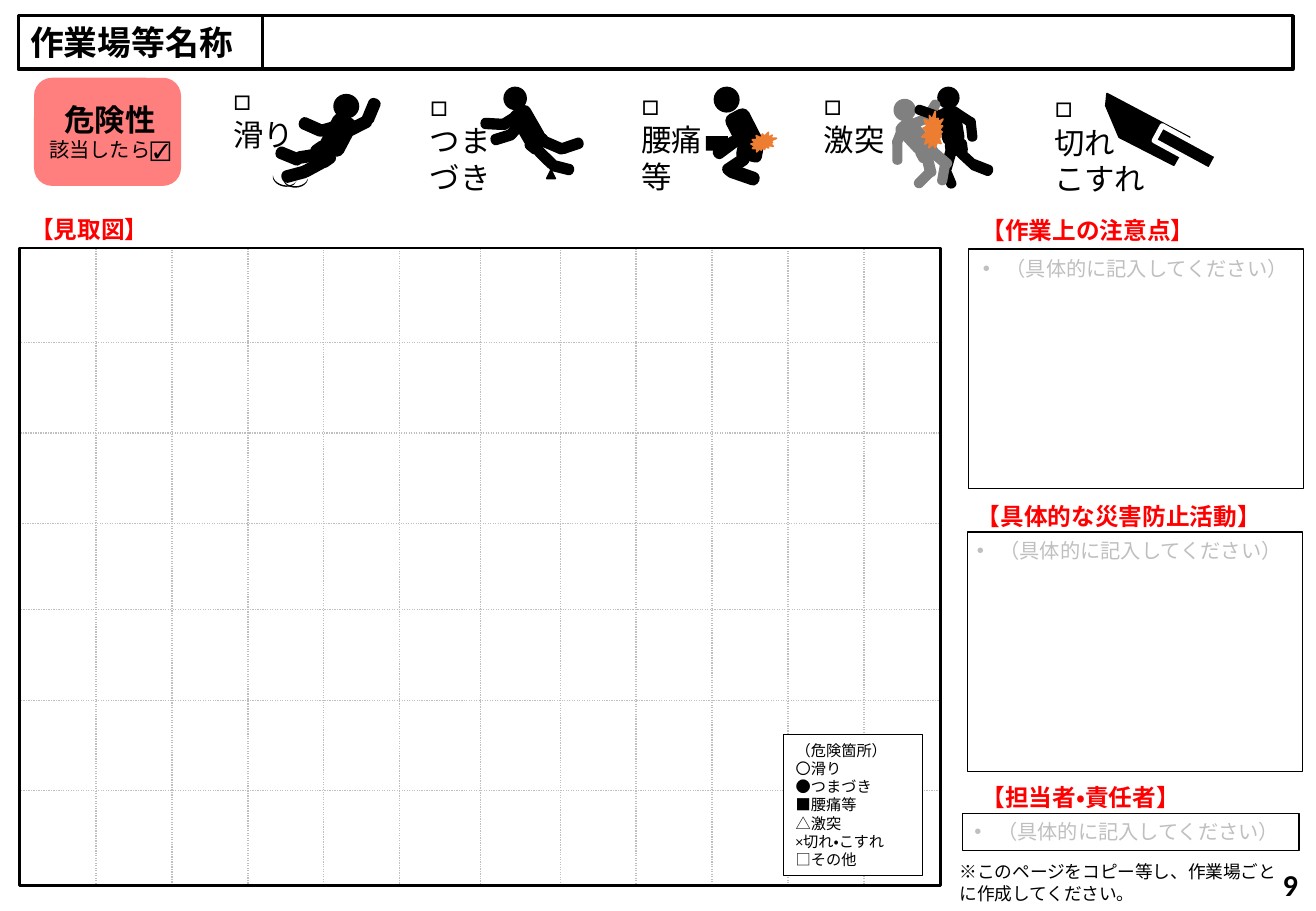
"""Build the workplace hazard map form: checklist, sketch grid and note boxes."""
from lxml import etree
from pptx import Presentation
from pptx.dml.color import RGBColor
from pptx.enum.dml import MSO_LINE
from pptx.enum.lang import MSO_LANGUAGE_ID
from pptx.enum.shapes import MSO_CONNECTOR, MSO_SHAPE
from pptx.enum.text import MSO_ANCHOR, MSO_AUTO_SIZE, PP_ALIGN
from pptx.oxml.ns import qn
from pptx.util import Cm, Pt

RECT, ROUND = MSO_SHAPE.RECTANGLE, MSO_SHAPE.ROUNDED_RECTANGLE
HEAD, LIMB = MSO_SHAPE.OVAL, MSO_SHAPE.FLOWCHART_TERMINATOR
BURST, MOON, WEDGE = MSO_SHAPE.EXPLOSION2, MSO_SHAPE.MOON, MSO_SHAPE.ISOSCELES_TRIANGLE
DOTTED, STRAIGHT = MSO_LINE.ROUND_DOT, MSO_CONNECTOR.STRAIGHT
LEFT, CENTER, RIGHT = PP_ALIGN.LEFT, PP_ALIGN.CENTER, PP_ALIGN.RIGHT
TOP, MIDDLE = MSO_ANCHOR.TOP, MSO_ANCHOR.MIDDLE
FIT, JAPANESE = MSO_AUTO_SIZE.SHAPE_TO_FIT_TEXT, MSO_LANGUAGE_ID.JAPANESE
BLACK, WHITE, GRAY, ORANGE = "000000", "FFFFFF", "808080", "ED7D31"
RED, PALE = "FF0000", "BFBFBF"
FONT = "Calibri"
ADJUSTMENT = {ROUND: 0.287, MOON: 0.166}
UNLINED = (MOON, RECT)

PAGE = (10.83, 7.5)
TITLE = ("作業場等名称", (0.15, 0.13, 2.01, 0.44), (2.16, 0.13, 8.48, 0.44))
SKETCH = (0.16, 2.04, 7.58, 5.25)
FIRST_COLUMN, COLUMN_GAP, COLUMN_PAIRS = 0.79, 0.625, 5
FIRST_ROW, ROW_GAP, ROW_PAIRS = 2.82, 0.745, 3
LEGEND = ["（危険箇所）", "〇滑り", "●つまづき", "■腰痛等", "△激突", "×切れ・こすれ", "□その他"]
LEGEND_AREA = (6.45, 6.05, 1.14, 1.16)
HEADINGS = [
    ("【見取図】", (0.15, 1.72, 1.54, 0.34)),
    ("【作業上の注意点】", (7.98, 1.73, 2.67, 0.34)),
    ("【具体的な災害防止活動】", (7.94, 4.08, 2.67, 0.34)),
    ("【担当者・責任者】", (7.98, 6.4, 2.67, 0.34)),
]
PROMPT = "（具体的に記入してください）"
NOTES = [
    ((7.97, 2.05, 2.76, 1.97), (7.99, 2.06, 2.73, 0.3)),
    ((7.96, 4.38, 2.76, 1.97), (7.94, 4.38, 2.77, 0.3)),
    ((7.92, 6.7, 2.77, 0.3), (7.92, 6.7, 2.77, 0.3)),
]
FOOTNOTE = ("※このページをコピー等し、作業場ごとに作成してください。", (7.8, 7.04, 2.9, 0.47))
PAGE_NUMBER = ("9", (8.34, 7.08, 2.44, 0.4))
BADGE = (["危険性", "該当したら☑"], (0.28, 0.64, 1.21, 0.89), (0.27, 0.78, 1.27, 0.61))
CHECKS = [
    (["□", "滑り"], (1.82, 0.61, 1.02, 0.71)),
    (["□", "つま", "づき"], (3.44, 0.66, 1.02, 1.01)),
    (["□", "激突"], (6.68, 0.65, 1.02, 0.71)),
    (["□", "腰痛", "等"], (5.18, 0.65, 1.02, 1.01)),
    (["□", "切れ", "こすれ"], (8.58, 0.67, 1.02, 1.01)),
]
BLADE = [(9.1, 0.87), (9.21, 1.13), (9.66, 1.36), (9.79, 1.13), (9.11, 0.77)]
HANDLE = (9.69, 0.96, 0.14, 0.52)
HANDLE_TURN = 298.5

SLIP = [(BLACK, [
    (HEAD, 2.75, 0.78, 0.2, 0.19, 0), (ROUND, 2.62, 1.01, 0.33, 0.2, 297.8),
    (LIMB, 2.62, 1.01, 0.22, 0.09, 344.1), (LIMB, 2.46, 1, 0.22, 0.09, 203.9),
    (LIMB, 2.95, 0.87, 0.21, 0.09, 292.5), (LIMB, 2.84, 0.99, 0.22, 0.09, 153),
    (LIMB, 2.27, 1.24, 0.22, 0.09, 22.3), (ROUND, 2.59, 1.17, 0.14, 0.2, 324.7),
    (LIMB, 2.32, 1.39, 0.22, 0.09, 345), (LIMB, 2.47, 1.33, 0.22, 0.09, 151.6),
    (LIMB, 2.43, 1.24, 0.22, 0.09, 350.7), (MOON, 2.3, 1.4, 0.07, 0.2, 283.4),
    (MOON, 2.4, 1.41, 0.07, 0.2, 267),
])]
TRIP = [(BLACK, [
    (HEAD, 4.15, 0.72, 0.18, 0.18, 357.5), (ROUND, 4.18, 0.95, 0.32, 0.17, 240.1),
    (LIMB, 4.6, 1.16, 0.2, 0.08, 341.2), (LIMB, 4.52, 1.34, 0.2, 0.08, 194.2),
    (LIMB, 4.39, 1.26, 0.2, 0.08, 224.2), (LIMB, 4.46, 1.16, 0.2, 0.08, 203.2),
    (LIMB, 3.96, 0.98, 0.2, 0.08, 183.2), (ROUND, 4.35, 1.08, 0.13, 0.18, 218.5),
    (LIMB, 4.04, 1.09, 0.2, 0.08, 162.6), (LIMB, 4.1, 0.95, 0.2, 0.08, 327.6),
    (LIMB, 4.15, 1.01, 0.21, 0.08, 310.9), (WEDGE, 4.5, 1.4, 0.07, 0.07, 0),
])]
CRASH = [(BLACK, [
    (HEAD, 7.72, 0.72, 0.17, 0.17, 346.4), (ROUND, 7.68, 0.95, 0.3, 0.17, 260.9),
    (LIMB, 7.64, 0.91, 0.19, 0.07, 0), (LIMB, 7.9, 1.03, 0.19, 0.07, 264),
    (LIMB, 7.83, 0.93, 0.19, 0.07, 33.5), (LIMB, 7.86, 1.27, 0.19, 0.07, 222.7),
    (ROUND, 7.81, 1.13, 0.12, 0.17, 262.2), (LIMB, 7.98, 1.34, 0.19, 0.08, 201.3),
    (LIMB, 7.71, 1.28, 0.19, 0.08, 286.1), (LIMB, 7.71, 1.42, 0.19, 0.07, 247.1),
]), (GRAY, [
    (ROUND, 7.37, 1.03, 0.3, 0.17, 227), (HEAD, 7.36, 0.82, 0.17, 0.17, 346.4),
    (ROUND, 7.57, 1.17, 0.12, 0.17, 240.5), (LIMB, 7.65, 1.27, 0.19, 0.08, 220.9),
    (LIMB, 7.67, 1.39, 0.19, 0.07, 279.9), (LIMB, 7.51, 1.43, 0.19, 0.07, 134.7),
    (LIMB, 7.55, 1.32, 0.19, 0.08, 76.5), (LIMB, 7.48, 0.96, 0.19, 0.07, 158.4),
    (LIMB, 7.57, 0.88, 0.19, 0.07, 120.5), (LIMB, 7.31, 1.08, 0.19, 0.07, 111.5),
    (LIMB, 7.29, 1.22, 0.19, 0.07, 270),
]), (BLACK, [(LIMB, 7.53, 0.89, 0.19, 0.07, 19.3)]),
    (ORANGE, [(BURST, 7.53, 0.97, 0.3, 0.2, 290.7)])]
BACK_PAIN = [(BLACK, [
    (HEAD, 5.88, 0.72, 0.2, 0.2, 346.4), (ROUND, 5.95, 0.98, 0.35, 0.2, 242.9),
    (LIMB, 5.86, 1.17, 0.23, 0.09, 143.3), (ROUND, 6.1, 1.15, 0.14, 0.2, 281.4),
    (LIMB, 5.94, 1.31, 0.23, 0.09, 326.2), (RECT, 5.81, 1.12, 0.18, 0.12, 0),
    (LIMB, 5.97, 1.39, 0.28, 0.1, 19.1),
]), (ORANGE, [(BURST, 6.18, 1.09, 0.21, 0.16, 0)])]


def inches(*values):
    return [Cm(value * 2.54) for value in values]


def color(code):
    return RGBColor.from_string(code)


def style(shape, fill=None, line=None, weight=1.0):
    shape.shadow.inherit = False
    for part, code in ((shape.fill, fill), (shape.line.fill, line)):
        if code:
            part.solid()
            part.fore_color.rgb = color(code)
        else:
            part.background()
    if line:
        shape.line.width = Pt(weight)
    return shape


def draw(shapes, kind, area, fill=None, line=None, weight=1.0, turn=0):
    shape = style(shapes.add_shape(kind, *inches(*area)), fill, line, weight)
    shape.rotation = turn
    return shape


def write(shape, lines, size, code=BLACK, bold=False, align=LEFT, anchor=TOP, bullet=False):
    frame = shape.text_frame
    frame.word_wrap = True
    frame.vertical_anchor = anchor
    frame.auto_size = FIT if anchor == TOP else MSO_AUTO_SIZE.NONE
    frame.text = "\n".join(lines)
    for para in frame.paragraphs:
        para.alignment = align
        font = para.font
        font.name, font.size, font.bold = FONT, Pt(size), bold
        font.color.rgb = color(code)
        font.language_id = JAPANESE
        if bullet:
            settings = para._p.get_or_add_pPr()
            settings.set("marL", "171450")
            settings.set("indent", "-171450")
            mark = etree.Element(qn("a:buChar"), char="•")
            face = etree.Element(qn("a:buFont"), typeface="Arial")
            settings.insert(0, mark)
            settings.insert(0, face)
    return frame


def label(shapes, area, lines, size, **options):
    return write(shapes.add_textbox(*inches(*area)), lines, size, **options)


def draw_grid(page):
    shapes = page.shapes.add_group_shape().shapes
    left, top, width, height = SKETCH
    areas = []
    for index in range(COLUMN_PAIRS):
        inset = FIRST_COLUMN + index * COLUMN_GAP - left
        areas.append((left + inset, top, width - 2 * inset, height))
    for index in range(ROW_PAIRS):
        inset = FIRST_ROW + index * ROW_GAP - top
        areas.append((left, top + inset, width, height - 2 * inset))
    for area in areas:
        draw(shapes, RECT, area, line=PALE, weight=0.75).line.dash_style = DOTTED
    middle = left + width / 2
    divider = shapes.add_connector(STRAIGHT, *inches(middle, top, middle, top + height))
    divider.line.color.rgb, divider.line.width = color(PALE), Pt(0.5)
    divider.line.dash_style = DOTTED
    etree.SubElement(divider._element.spPr, qn("a:effectLst"))
    draw(shapes, RECT, SKETCH, line=BLACK, weight=1.5)


def draw_figure(page, layers):
    shapes = page.shapes.add_group_shape().shapes
    for code, parts in layers:
        for kind, *area, turn in parts:
            shape = draw(shapes, kind, area, code, None if kind in UNLINED else code, turn=turn)
            if kind in ADJUSTMENT:
                shape.adjustments[0] = ADJUSTMENT[kind]


def draw_knife(page):
    shapes = page.shapes.add_group_shape().shapes
    corners = [inches(*point) for point in BLADE]
    outline = shapes.build_freeform(*corners[0])
    outline.add_line_segments(corners[1:], close=True)
    style(outline.convert_to_shape(), BLACK, BLACK)
    draw(shapes, RECT, HANDLE, BLACK, WHITE, 3, HANDLE_TURN)


def main():
    deck = Presentation()
    deck.slide_width, deck.slide_height = inches(*PAGE)
    page = deck.slides.add_slide(deck.slide_layouts[6])
    shapes = page.shapes
    name, name_area, entry_area = TITLE
    write(draw(shapes, RECT, name_area, line=BLACK, weight=2), [name], 20, bold=True)
    draw(shapes, RECT, entry_area, line=BLACK, weight=2)
    draw_grid(page)
    write(draw(shapes, RECT, LEGEND_AREA, WHITE, BLACK, 0.75), LEGEND, 9)
    for figure in (SLIP, TRIP, CRASH, BACK_PAIN):
        draw_figure(page, figure)
    draw_knife(page)
    for lines, area in CHECKS:
        label(shapes, area, lines, 18)
    lines, badge_area, text_area = BADGE
    badge = draw(shapes, ROUND, badge_area, RED)
    tint = badge._element.spPr.find(".//" + qn("a:srgbClr"))
    etree.SubElement(tint, qn("a:alpha"), val="50000")
    hint = label(shapes, text_area, lines, 18, bold=True, align=CENTER).paragraphs[1]
    hint.font.size, hint.font.bold = Pt(12), False
    for frame_area, prompt_area in NOTES:
        draw(shapes, RECT, frame_area, line=BLACK, weight=0.75)
        label(shapes, prompt_area, [PROMPT], 12, code=PALE, bullet=True)
    for heading, area in HEADINGS:
        label(shapes, area, [heading], 14, code=RED, bold=True)
    label(shapes, FOOTNOTE[1], [FOOTNOTE[0]], 10.5)
    label(shapes, PAGE_NUMBER[1], [PAGE_NUMBER[0]], 18, bold=True, align=RIGHT, anchor=MIDDLE)
    deck.save("out.pptx")


if __name__ == "__main__":
    main()
